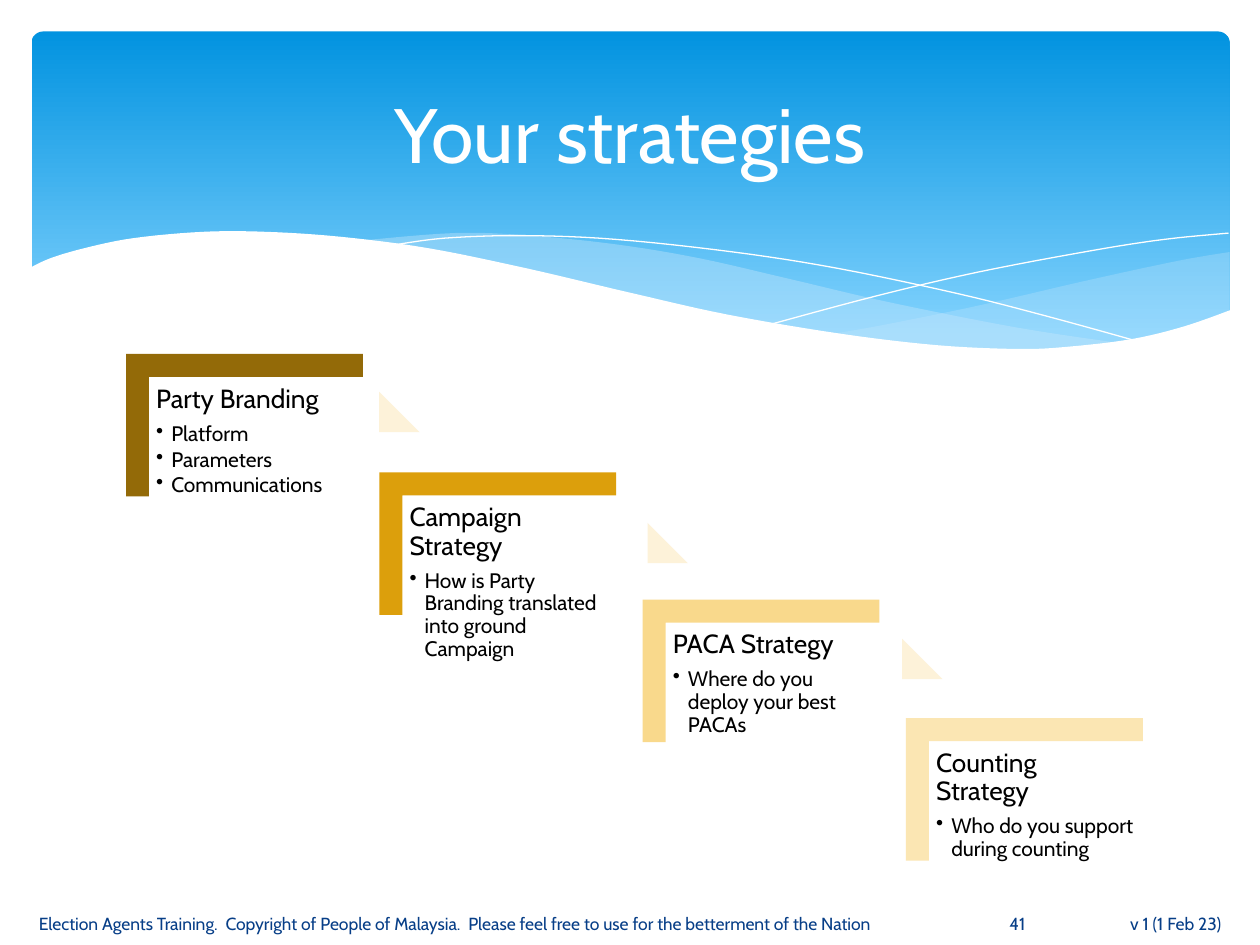
from dataclasses import dataclass

from lxml.etree import SubElement
from pptx import Presentation
from pptx.dml.color import RGBColor
from pptx.enum.shapes import MSO_SHAPE
from pptx.enum.text import MSO_ANCHOR, PP_ALIGN
from pptx.oxml.ns import qn
from pptx.util import Inches, Pt

FONT = "Cabin"
NAVY, WHITE, BLACK = "073E87", "FFFFFF", "000000"
PALE_BLUE, CREAM = "C6E7FC", "FDF2D9"
CORNER = MSO_SHAPE.from_xml("corner")
Point = tuple[float, float]


@dataclass
class Step:
    x: float
    y: float
    color: str
    title: str
    bullets: list[str]
    text_h: float = 1.48


STEPS = [
    Step(1.0, 2.81, "936A08", "Party Branding",
         ["Platform", "Parameters", "Communications"]),
    Step(3.01, 3.75, "DC9F0C", "Campaign Strategy",
         ["How is Party Branding translated into ground Campaign"]),
    Step(5.1, 4.76, "F9D98C", "PACA Strategy",
         ["Where do you deploy your best PACAs"]),
    Step(7.19, 5.7, "FBE6B3", "Counting Strategy",
         ["Who do you support during counting"], 1.08),
]
TRIANGLES = [(3.01, 3.11), (5.14, 4.15), (7.16, 5.07)]

# Key points of the header waves
RIGHT_TOP = [(9.76, 2), (9.35, 2.07), (8.61, 2.23), (7.79, 2.42), (7.06, 2.57), (6.61, 2.65)]
RIGHT_LOW = [(6.61, 2.65), (7.05, 2.71), (7.57, 2.76), (8.03, 2.78), (8.54, 2.76),
             (8.97, 2.7), (9.35, 2.62), (9.76, 2.47)]
MIDDLE_TOP = [(8.93, 2.73), (8.07, 2.6), (7.06, 2.4), (6.29, 2.22), (5.55, 2.05),
              (4.89, 1.94), (4.2, 1.87), (3.61, 1.85), (2.86, 1.91)]
MIDDLE_LOW = [(2.86, 1.91), (3.62, 2.03), (4.49, 2.22), (5.3, 2.4), (6.01, 2.55),
              (6.8, 2.68), (7.48, 2.76), (8.07, 2.78), (8.57, 2.77), (8.93, 2.73)]
FALLING = [(3.09, 1.95), (3.53, 1.89), (4.16, 1.87), (4.89, 1.9), (5.82, 2),
           (6.65, 2.13), (7.6, 2.33), (8.31, 2.51), (9.07, 2.72)]
RISING = [(6.13, 2.57), (6.95, 2.35), (7.76, 2.16), (8.66, 1.99), (9.24, 1.9), (9.75, 1.85)]
FRONT = [(9.77, 2.46), (9.4, 2.59), (8.99, 2.69), (8.5, 2.75), (8.09, 2.77), (7.44, 2.74),
         (6.68, 2.65), (5.79, 2.5), (5.03, 2.33), (4.18, 2.13), (3.4, 1.97), (2.71, 1.88),
         (2.11, 1.84), (1.61, 1.84), (1.06, 1.89), (0.67, 1.97), (0.4, 2.05), (0.23, 2.13)]


def rgb(color: str) -> RGBColor:
    return RGBColor.from_string(color)


def smooth(pts: list[Point], n: int = 6) -> list[Point]:
    """Catmull-Rom curve through the points."""
    ext = [pts[0], *pts, pts[-1]]
    curve = []
    for a, b, c, d in zip(ext, ext[1:], ext[2:], ext[3:]):
        for t in (i / n for i in range(n)):
            curve.append(tuple(
                q + (r - p) * t / 2 + (2 * p - 5 * q + 4 * r - s) * t * t / 2
                + (3 * q - p - 3 * r + s) * t ** 3 / 2
                for p, q, r, s in zip(a, b, c, d)))
    return curve + [pts[-1]]


def paint(sp, color: str, alpha: int = 100) -> None:
    sp.shadow.inherit = False
    sp.fill.solid()
    sp.fill.fore_color.rgb = rgb(color)
    sp.line.fill.background()
    if alpha < 100:
        clr = sp._element.spPr.find(".//" + qn("a:srgbClr"))
        SubElement(clr, qn("a:alpha"), val=str(alpha * 1000))


def add_outline(s, pts: list[Point], close: bool):
    emu = [(Inches(x), Inches(y)) for x, y in pts]
    builder = s.shapes.build_freeform(*emu[0])
    builder.add_line_segments(emu[1:], close=close)
    return builder.convert_to_shape()


def add_wave(s, pts: list[Point], color: str, alpha: int = 100) -> None:
    paint(add_outline(s, pts, True), color, alpha)


def add_curve(s, pts: list[Point]) -> None:
    sp = add_outline(s, smooth(pts), False)
    sp.shadow.inherit = False
    sp.fill.background()
    sp.line.color.rgb = rgb(WHITE)
    sp.line.width = Pt(0)


def add_turned(s, kind: MSO_SHAPE, x: float, y: float, w: float, h: float,
               color: str, adj: list[float]) -> None:
    """Shape turned by 90 degrees; x, y, w, h are its visible bounds."""
    sp = s.shapes.add_shape(kind, Inches(x + (w - h) / 2), Inches(y + (h - w) / 2),
                            Inches(h), Inches(w))
    sp.rotation = 90
    for i, value in enumerate(adj):
        sp.adjustments[i] = value
    paint(sp, color)


def add_box(s, x: float, y: float, w: float, h: float, anchor=MSO_ANCHOR.MIDDLE):
    tf = s.shapes.add_textbox(Inches(x), Inches(y), Inches(w), Inches(h)).text_frame
    tf.word_wrap = True
    tf.vertical_anchor = anchor
    return tf


def write(p, text: str, *, size: float, color: str, align=PP_ALIGN.LEFT,
          spacing: float = 1.0, after: float = 0, bullet: bool = False) -> None:
    p.alignment, p.line_spacing, p.space_after = align, spacing, Pt(after)
    if bullet:
        pPr = p._p.get_or_add_pPr()
        pPr.set("marL", str(Inches(0.12)))
        pPr.set("indent", str(Inches(-0.12)))
        SubElement(pPr, qn("a:buChar"), char="•")
    r = p.add_run()
    r.text = text
    r.font.name, r.font.size = FONT, Pt(size)
    r.font.color.rgb = rgb(color)


def add_step(s, step: Step) -> None:
    add_turned(s, CORNER, step.x, step.y, 1.88, 1.13, step.color, [0.161, 0.161])
    tf = add_box(s, step.x + 0.18, step.y + 0.19, 1.69, step.text_h, MSO_ANCHOR.TOP)
    tf.margin_left = tf.margin_right = tf.margin_top = tf.margin_bottom = Inches(0.06)
    write(tf.paragraphs[0], step.title, size=15, color=BLACK, spacing=0.9, after=5.25)
    for text in step.bullets:
        write(tf.add_paragraph(), text, size=12, color=BLACK, spacing=0.9,
              after=1.8, bullet=True)


def add_header(s) -> None:
    sp = s.shapes.add_shape(MSO_SHAPE.ROUNDED_RECTANGLE, Inches(0.25), Inches(0.25),
                            Inches(9.51), Inches(2.7))
    sp.adjustments[0] = 0.034
    sp.shadow.inherit = False
    sp.line.fill.background()
    sp.fill.gradient()
    sp.fill.gradient_angle = 270
    for stop, (pos, color) in zip(sp.fill.gradient_stops, [(0, "0293E0"), (0.9, "83D3FE")]):
        stop.position, stop.color.rgb = pos, rgb(color)

    add_wave(s, smooth(RIGHT_TOP) + smooth(RIGHT_LOW), PALE_BLUE, 29)
    add_wave(s, smooth(MIDDLE_TOP) + smooth(MIDDLE_LOW), PALE_BLUE, 40)
    add_curve(s, FALLING)
    add_curve(s, RISING)
    add_wave(s, smooth(FRONT) + [(0.23, 3.29), (9.77, 3.29)], WHITE)


def main() -> None:
    prs = Presentation()
    prs.slide_width, prs.slide_height = Inches(10), Inches(7.5)
    s = prs.slides.add_slide(prs.slide_layouts[6])

    add_header(s)

    # Descending steps, with a triangle between neighbours
    for step in STEPS:
        add_step(s, step)
    for x, y in TRIANGLES:
        add_turned(s, MSO_SHAPE.ISOSCELES_TRIANGLE, x, y, 0.32, 0.32, CREAM, [1])

    # Footer
    for x, w, align, text in [
        (8.39, 1.4, PP_ALIGN.RIGHT, "v 1 (1 Feb 23)"),
        (0.21, 7.2, PP_ALIGN.LEFT, "Election Agents Training.  Copyright of People of Malaysia.  "
                                   "Please feel free to use for the betterment of the Nation"),
        (7.76, 0.63, PP_ALIGN.CENTER, "41"),
    ]:
        tf = add_box(s, x, 7.2, w, 0.26)
        write(tf.paragraphs[0], text, size=10, color=NAVY, align=align)

    # Title
    tf = add_box(s, 0.5, 0.37, 9, 1.37)
    write(tf.paragraphs[0], "Your strategies", size=44, color=WHITE, align=PP_ALIGN.CENTER)

    prs.save("out.pptx")


if __name__ == "__main__":
    main()
